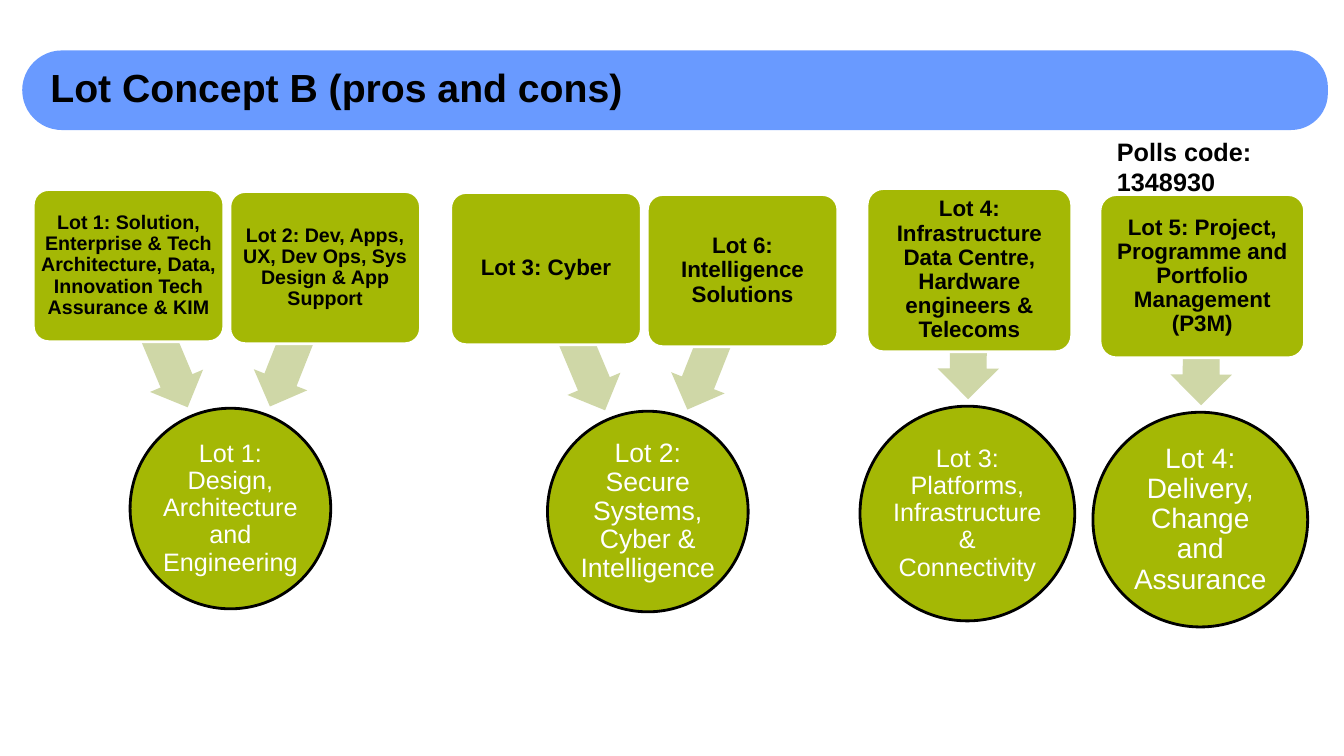
"""Build the Lot Concept B slide: existing lots merging into four new lots."""
from pptx import Presentation
from pptx.dml.color import RGBColor
from pptx.enum.shapes import MSO_SHAPE
from pptx.enum.text import MSO_ANCHOR, PP_ALIGN
from pptx.util import Inches, Pt

COLORS = {"banner": "699AFF", "lot": "A4B805", "arrow": "CFD7A7",
          "black": "000000", "white": "FFFFFF"}


def add_shape(kind, x, y, w, h, fill, line=None, adj=(), rot=0):
    sp = s.shapes.add_shape(kind, Inches(x), Inches(y), Inches(w), Inches(h))
    sp.shadow.inherit = False
    sp.fill.solid()
    sp.fill.fore_color.rgb = RGBColor.from_string(COLORS[fill])
    if line:
        sp.line.color.rgb = RGBColor.from_string(COLORS[line])
        sp.line.width = Pt(2)
    else:
        sp.line.fill.background()
    for i, value in enumerate(adj):
        sp.adjustments[i] = value
    sp.rotation = rot
    return sp


def set_text(sp, text, size, color, bold, inset, centred=True):
    tf = sp.text_frame
    tf.text = text
    tf.word_wrap = True
    tf.margin_left = tf.margin_right = Inches(inset)
    tf.margin_top = tf.margin_bottom = Inches(inset)
    tf.vertical_anchor = MSO_ANCHOR.MIDDLE if centred else MSO_ANCHOR.TOP
    p = tf.paragraphs[0]
    p.alignment = PP_ALIGN.CENTER if centred else PP_ALIGN.LEFT
    if centred:
        p.line_spacing = 0.9
    font = p.runs[0].font
    font.name = "Arial"
    font.size = Pt(size)
    font.bold = bold
    font.color.rgb = RGBColor.from_string(COLORS[color])


prs = Presentation()
prs.slide_width = Inches(13.33)
prs.slide_height = Inches(7.5)
s = prs.slides.add_slide(prs.slide_layouts[6])

add_shape(MSO_SHAPE.ROUND_2_SAME_RECTANGLE, 6.3, -5.58, 0.79, 12.95, "banner",
          adj=(0.463, 0.5), rot=90)

# Offsets are measured from the top left of the new lot's circle.
pair = {"diameter": 1.99, "box": (1.89, 1.51),
        "boxes": [(-0.96, -2.17), (0.99, -2.15)],
        "arrows": [(-0.49, -1, 1.53, 0.57, 247.2), (0.92, -0.99, 1.48, 0.57, 291.6)]}
single = {"diameter": 2.13, "box": (2.03, 1.62),
          "boxes": [(0.07, -2.16)],
          "arrows": [(0.44, -1.01, 1.27, 0.61, 270.2)]}

new_lots = [
    (pair, 1.29, 4.05, "Lot 1: Design, Architecture and Engineering", 18, 14, 0.03,
     ["Lot 1: Solution, Enterprise & Tech Architecture, Data, Innovation Tech Assurance & KIM",
      "Lot 2: Dev, Apps, UX, Dev Ops, Sys Design & App Support"]),
    (pair, 5.43, 4.08, "Lot 2: Secure Systems, Cyber & Intelligence", 19, 16, 0.05,
     ["Lot 3: Cyber", "Lot 6: Intelligence Solutions"]),
    (single, 8.53, 4.03, "Lot 3: Platforms, Infrastructure & Connectivity", 18, 16, 0.03,
     ["Lot 4: Infrastructure Data Centre, Hardware engineers & Telecoms"]),
    (single, 10.84, 4.09, "Lot 4: Delivery, Change and Assurance", 20, 16, 0.04,
     ["Lot 5: Project, Programme and Portfolio Management (P3M)"]),
]

for layout, x, y, new_lot, new_size, old_size, inset, old_lots in new_lots:
    diameter = layout["diameter"]
    circle = add_shape(MSO_SHAPE.OVAL, x, y, diameter, diameter, "lot", "black")
    set_text(circle, new_lot, new_size, "white", False, 0.01)
    for old_lot, (dx, dy), arrow in zip(old_lots, layout["boxes"], layout["arrows"]):
        ax, ay, length, width, rot = arrow
        add_shape(MSO_SHAPE.LEFT_ARROW, x + ax, y + ay, length, width, "arrow",
                  adj=(0.6, 0.5), rot=rot)
        box = add_shape(MSO_SHAPE.ROUNDED_RECTANGLE, x + dx, y + dy, *layout["box"],
                        "lot", "white", adj=(0.1,))
        set_text(box, old_lot, old_size, "black", True, inset)

for x, y, w, h, text, size, inset in [
    (0.5, 0.63, 10.48, 0.58, "Lot Concept B (pros and cons)", 28, 0),
    (10.98, 1.25, 2, 0.63, "Polls code: 1348930", 18, 0.1),
]:
    label = s.shapes.add_textbox(Inches(x), Inches(y), Inches(w), Inches(h))
    set_text(label, text, size, "black", True, inset, centred=False)

prs.save("out.pptx")
